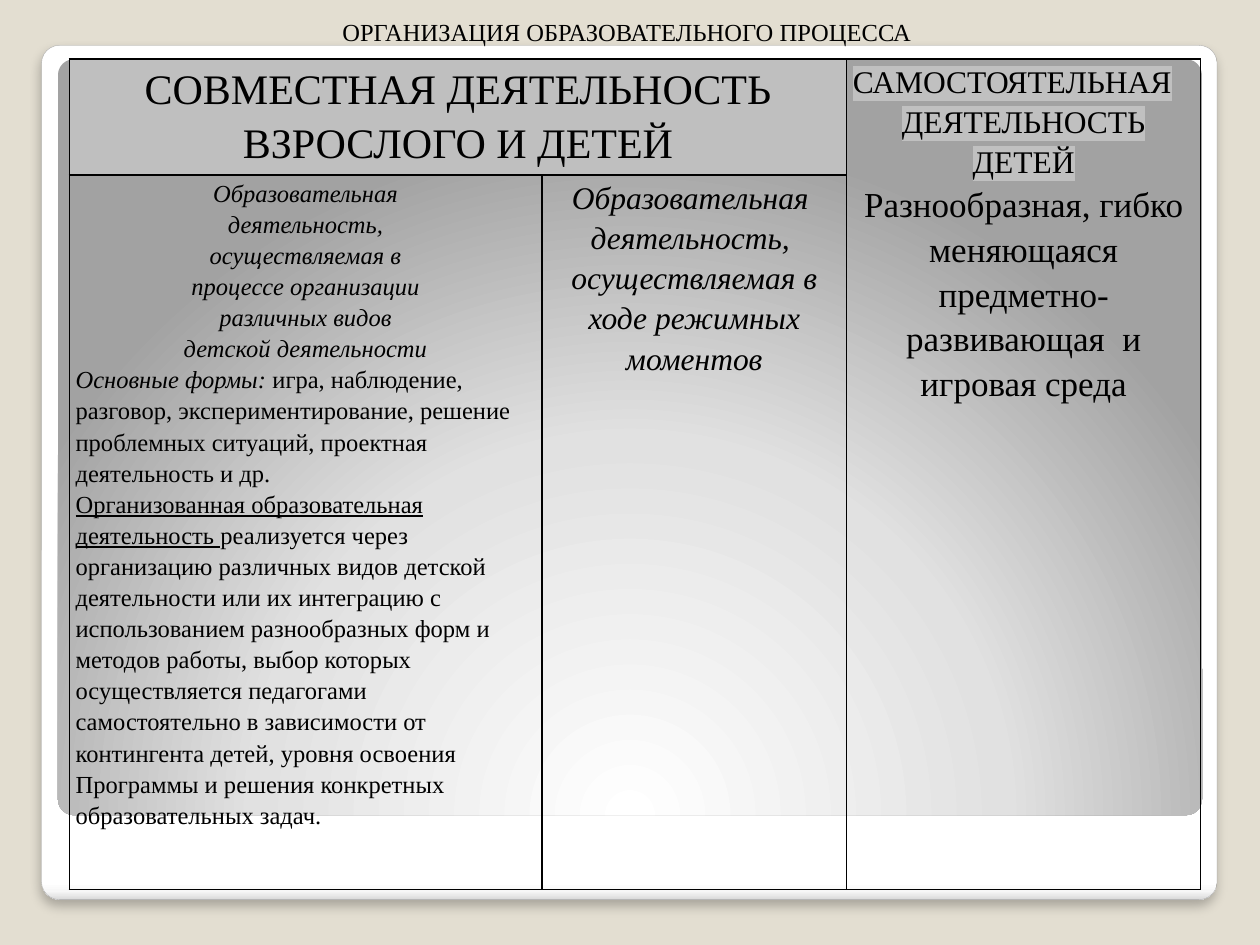
from pptx import Presentation
from pptx.dml.color import RGBColor
from pptx.enum.shapes import MSO_SHAPE
from pptx.enum.text import MSO_ANCHOR, MSO_AUTO_SIZE, PP_ALIGN
from pptx.oxml import parse_xml
from pptx.util import Inches, Pt

NS = 'xmlns:a="http://schemas.openxmlformats.org/drawingml/2006/main"'
FONT = "Times New Roman"
W, H = 10, 7.5
TITLE = "ОРГАНИЗАЦИЯ ОБРАЗОВАТЕЛЬНОГО ПРОЦЕССА "
COLS, ROWS = (3.75, 2.42, 2.81), (0.92, 5.67)
TABLE_AT = (0.55, 0.47)
C, L = PP_ALIGN.CENTER, PP_ALIGN.LEFT
BIG, MID, SMALL = {"size": 24}, {"size": 18}, {"size": 14}
MARKED = {"size": 18, "mark": "C0C0C0"}
ITALIC_MID, ITALIC = {**MID, "italic": True}, {**SMALL, "italic": True}
ACTIVITY = ("Образовательная", "деятельность,", "осуществляемая в",
            "процессе организации", "различных видов", "детской деятельности")
ROUTINE = ("Образовательная ", "деятельность, ",
           "осуществляемая в ходе режимных моментов")
CELLS = {
    (0, 0): [(C, [("СОВМЕСТНАЯ ДЕЯТЕЛЬНОСТЬ ВЗРОСЛОГО И ДЕТЕЙ", BIG)])],
    (0, 2): [
        (L, [("САМОСТОЯТЕЛЬНАЯ", MARKED)]),
        (C, [("ДЕЯТЕЛЬНОСТЬ ДЕТЕЙ", MARKED)]),
        (C, [("Разнообразная, гибко меняющаяся предметно-развивающая  и игровая среда",
              {"size": 20})]),
    ],
    (1, 0): [(C, [(line, ITALIC)]) for line in ACTIVITY] + [
        (L, [("Основные формы: ", ITALIC),
             ("игра, наблюдение, разговор, экспериментирование, решение проблемных "
              "ситуаций, проектная деятельность и др.", SMALL)]),
        (L, [("Организованная образовательная деятельность ", {**SMALL, "underline": True}),
             ("реализуется через организацию различных видов детской деятельности или их "
              "интеграцию с использованием разнообразных форм и методов работы, выбор "
              "которых осуществляется педагогами самостоятельно в зависимости от "
              "контингента детей, уровня освоения Программы и решения конкретных "
              "образовательных задач.", SMALL)]),
    ],
    (1, 1): [(C, [(line, ITALIC_MID)]) for line in ROUTINE],
}
FILLS = {(0, 0): "BFBFBF", (0, 1): "BFBFBF"}
FRAME_STOPS = ((0, "FFFFFF"), (98, "FFFFFF"), (99, "F7F7F7"), (100, "DADADA"))
PANEL_STOPS = ((0, "FFFFFF"), (55, "E1E1E1"), (100, "A2A2A2"))
DOWN = '<a:lin ang="5400000" scaled="0"/>'
RADIAL = ('<a:path path="circle">'
          '<a:fillToRect l="50000" t="175000" r="50000" b="-75000"/></a:path>')
SHADOW = ('<a:outerShdw {} blurRad="76200" dist="50800" dir="5400000" algn="tl" '
          'rotWithShape="0"><a:srgbClr val="000000"><a:alpha val="25000"/>'
          '</a:srgbClr></a:outerShdw>')


def color(value):
    """Turn a hex string into a colour."""
    return RGBColor.from_string(value)


def add_run(p, text, size=14, italic=False, underline=False, mark=None):
    """Add one formatted run to a paragraph."""
    r = p.add_run()
    r.text = text
    font = r.font
    font.size, font.name = Pt(size), FONT
    font.bold, font.italic, font.underline = False, italic, underline
    font.color.rgb = color("000000")
    if mark:
        fill = r.font.color.rgb and r._r.rPr.find(
            "{http://schemas.openxmlformats.org/drawingml/2006/main}solidFill")
        fill.addnext(parse_xml(
            f'<a:highlight {NS}><a:srgbClr val="{mark}"/></a:highlight>'))


def add_panel(s, box, stops, direction):
    """Add a rounded rectangle with a gradient fill."""
    sp = s.shapes.add_shape(MSO_SHAPE.ROUNDED_RECTANGLE, *map(Inches, box))
    sp.adjustments[0] = 0.021
    sp.shadow.inherit = False
    sp.line.fill.background()
    gs = "".join(f'<a:gs pos="{pos * 1000}"><a:srgbClr val="{c}"/></a:gs>'
                 for pos, c in stops)
    sp.element.spPr.prstGeom.addnext(parse_xml(
        f'<a:gradFill {NS} rotWithShape="1"><a:gsLst>{gs}</a:gsLst>{direction}</a:gradFill>'))
    return sp


def fill_cell(cell, paragraphs, fill):
    """Format a cell, draw its borders and write its paragraphs."""
    cell.margin_left = cell.margin_right = Inches(0.05)
    cell.margin_top, cell.margin_bottom = Inches(0.01), 0
    if fill:
        cell.fill.solid()
        cell.fill.fore_color.rgb = color(fill)
    else:
        cell.fill.background()
    for i, side in enumerate("LRTB"):
        cell._tc.tcPr.insert(i, parse_xml(
            f'<a:ln{side} {NS} w="12700"><a:solidFill><a:srgbClr val="000000"/>'
            f'</a:solidFill></a:ln{side}>'))
    tf = cell.text_frame
    for i, (align, runs) in enumerate(paragraphs):
        p = tf.add_paragraph() if i else tf.paragraphs[0]
        p.alignment, p.line_spacing = align, 1.15
        for text, style in runs:
            add_run(p, text, **style)


def add_grid(s):
    """Add the table with its merged heading cells."""
    table = s.shapes.add_table(len(ROWS), len(COLS), *map(
        Inches, (*TABLE_AT, sum(COLS), sum(ROWS)))).table
    table.first_row = table.horz_banding = False
    for col, width in zip(table.columns, COLS):
        col.width = Inches(width)
    for row, height in zip(table.rows, ROWS):
        row.height = Inches(height)
    table.cell(0, 0).merge(table.cell(0, 1))
    table.cell(0, 2).merge(table.cell(1, 2))
    for i in range(len(ROWS)):
        for j in range(len(COLS)):
            fill_cell(table.cell(i, j), CELLS.get((i, j), []), FILLS.get((i, j)))


def add_title(s):
    """Place the title in front, across the top of the slide."""
    title = s.shapes.title
    title.left, title.top, title.width, title.height = map(Inches, (0, 0, W, 0.5))
    tf = title.text_frame
    tf.word_wrap, tf.auto_size = False, MSO_AUTO_SIZE.SHAPE_TO_FIT_TEXT
    tf.vertical_anchor = MSO_ANCHOR.MIDDLE
    p = tf.paragraphs[0]
    p.alignment = C
    add_run(p, TITLE)
    title.element.getparent().append(title.element)


def main():
    """Build the slide and save it."""
    prs = Presentation()
    prs.slide_width, prs.slide_height = Inches(W), Inches(H)
    s = prs.slides.add_slide(prs.slide_layouts[5])
    s.background.fill.solid()
    s.background.fill.fore_color.rgb = color("E3DED1")
    frame = add_panel(s, (0.33, 0.36, 9.33, 6.78), FRAME_STOPS, DOWN)
    frame.line.color.rgb = color("A4A4A4")
    frame.line.width = Pt(0.16)
    frame.element.spPr.effectLst.append(parse_xml(SHADOW.format(NS)))
    add_panel(s, (0.46, 0.47, 9.08, 6), PANEL_STOPS, RADIAL)
    add_grid(s)
    add_title(s)
    prs.save("out.pptx")


if __name__ == "__main__":
    main()
